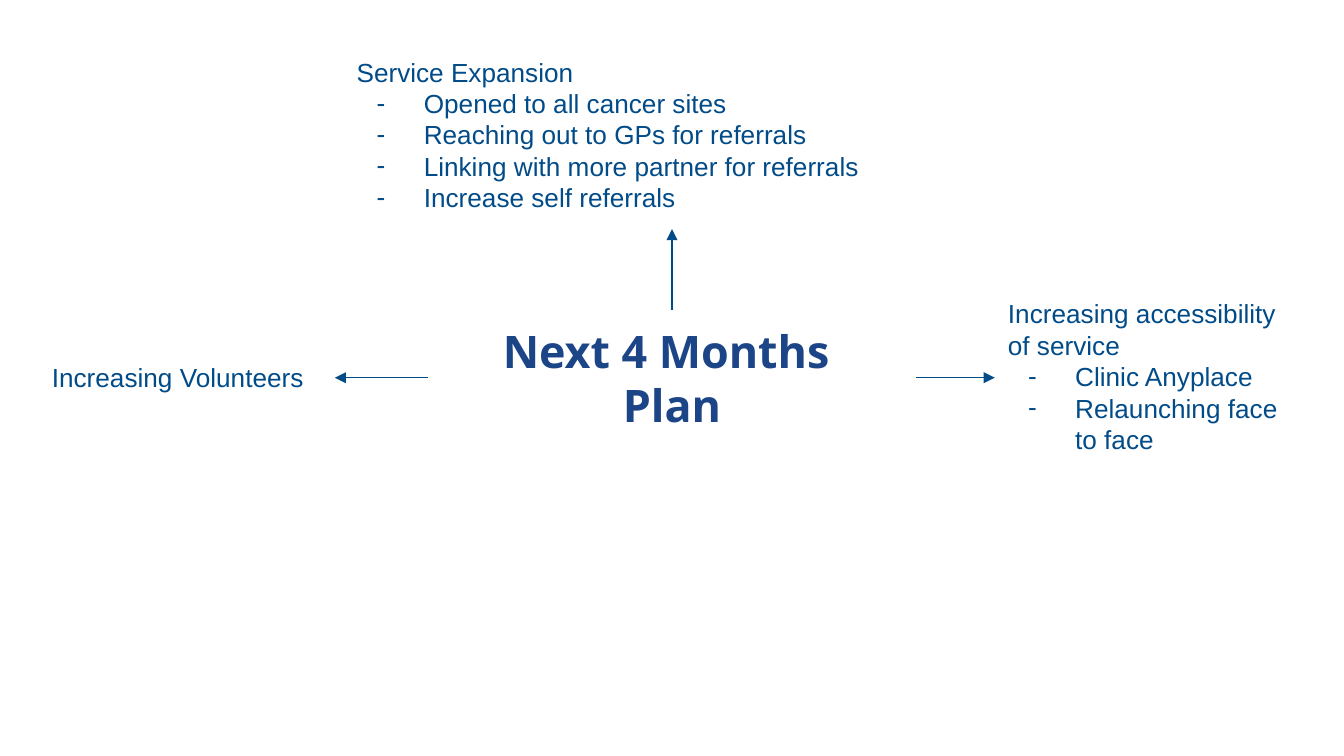
"""Build the slide showing the plan for the next four months."""
import lxml.etree
import pptx
import pptx.dml.color
import pptx.enum.shapes
import pptx.enum.text
import pptx.oxml.ns
import pptx.util

Cm = pptx.util.Cm
Pt = pptx.util.Pt
qn = pptx.oxml.ns.qn
BLUE = "004B88"
TITLE_FORMAT = {"name": "Open Sans", "size": Pt(24), "bold": True}
BODY_FORMAT = {"name": "Arial", "size": Pt(14)}
MARGINS = ("margin_left", "margin_top", "margin_right", "margin_bottom")


def colour(value):
    return pptx.dml.color.RGBColor.from_string(value)


def add_text(page, place, lines, font_format, hue):
    box = page.shapes.add_textbox(*[Cm(length) for length in place])
    frame = box.text_frame
    frame.word_wrap = True
    for margin in MARGINS:
        setattr(frame, margin, Cm(0.25))
    for index, line in enumerate(lines):
        para = frame.paragraphs[0] if index == 0 else frame.add_paragraph()
        span = para.add_run()
        span.text = line
        for name, value in font_format.items():
            setattr(span.font, name, value)
        span.font.color.rgb = colour(hue)
    return box


deck = pptx.Presentation()
deck.slide_width, deck.slide_height = Cm(25.4), Cm(14.29)
page = deck.slides.add_slide(deck.slide_layouts[6])

title = add_text(page, (8.08, 5.86, 9.24, 2.56), ["Next 4 Months ", "Plan"], TITLE_FORMAT, "1C4587")
title.text_frame.vertical_anchor = pptx.enum.text.MSO_ANCHOR.MIDDLE
for para in title.text_frame.paragraphs:
    para.alignment = pptx.enum.text.PP_ALIGN.CENTER

branches = [
    ((6.49, 0.81, 12.42, 3.52), 0, 2, [
        "Service Expansion",
        "Opened to all cancer sites",
        "Reaching out to GPs for referrals",
        "Linking with more partner for referrals",
        "Increase self referrals",
    ]),
    ((18.8, 5.38, 6.1, 3.52), 3, 1, [
        "Increasing accessibility of service",
        "Clinic Anyplace",
        "Relaunching face to face",
    ]),
    ((0.73, 6.58, 5.6, 1.12), 1, 3, ["Increasing Volunteers"]),
]

for place, title_side, branch_side, lines in branches:
    box = add_text(page, place, lines, BODY_FORMAT, BLUE)
    for para in box.text_frame.paragraphs[1:]:
        properties = para._p.get_or_add_pPr()
        properties.set("marL", str(Cm(1.27)))
        properties.set("indent", str(Cm(-0.89)))
        bullet_colour = lxml.etree.SubElement(properties, qn("a:buClr"))
        lxml.etree.SubElement(bullet_colour, qn("a:srgbClr"), val=BLUE)
        lxml.etree.SubElement(properties, qn("a:buFont"), typeface="Arial")
        lxml.etree.SubElement(properties, qn("a:buChar"), char="-")

    arrow = page.shapes.add_connector(pptx.enum.shapes.MSO_CONNECTOR.STRAIGHT, 0, 0, 0, 0)
    arrow.begin_connect(title, title_side)
    arrow.end_connect(box, branch_side)
    arrow.line.color.rgb = colour(BLUE)
    arrow.line.width = Pt(0.75)
    lxml.etree.SubElement(arrow.line._get_or_add_ln(), qn("a:tailEnd"), type="triangle")
    lxml.etree.SubElement(arrow._element.spPr, qn("a:effectLst"))

deck.save("out.pptx")
